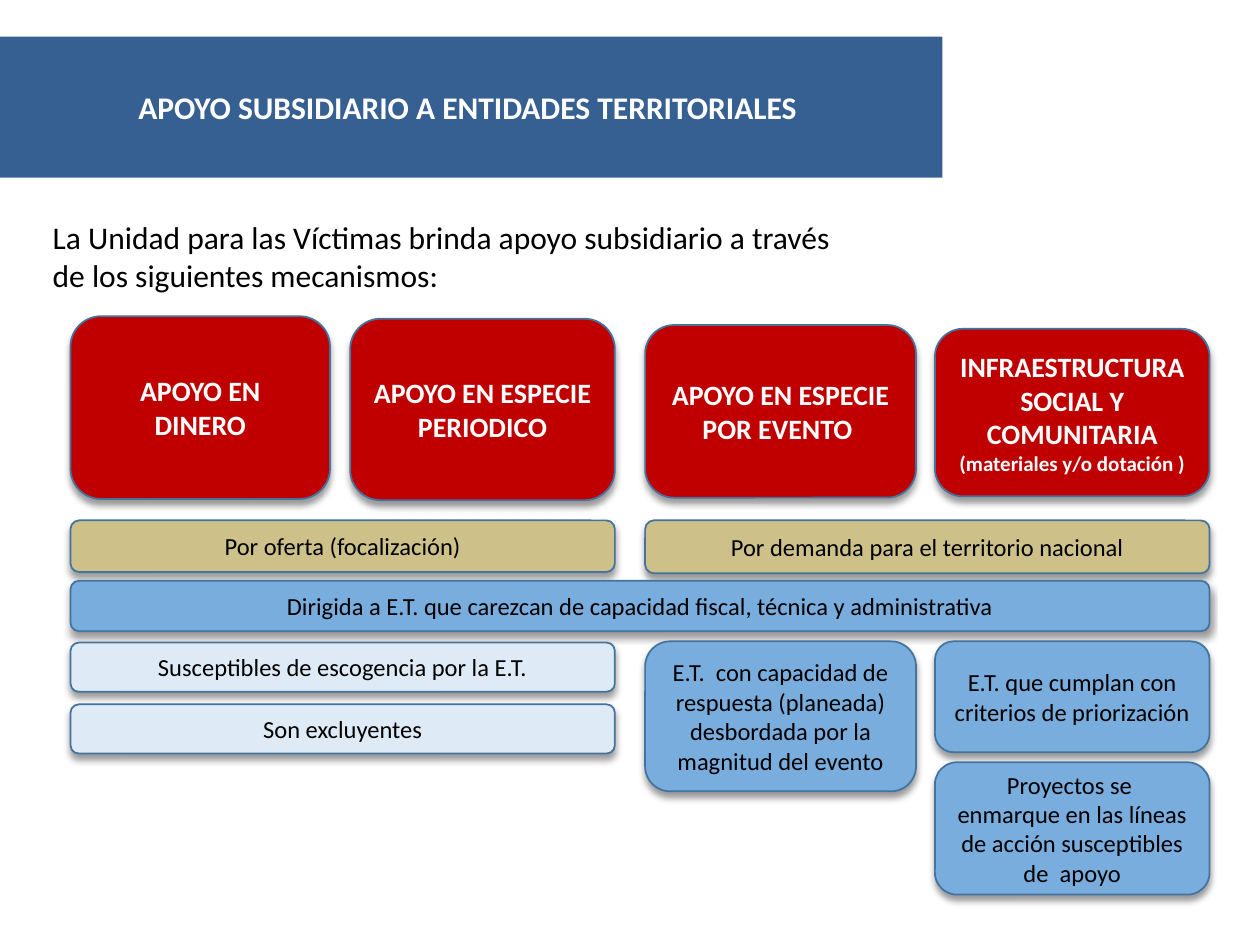
from dataclasses import dataclass

from lxml import etree
from pptx import Presentation
from pptx.dml.color import RGBColor
from pptx.enum.shapes import MSO_SHAPE
from pptx.enum.text import MSO_ANCHOR, PP_ALIGN
from pptx.oxml.ns import qn
from pptx.util import Inches, Pt

RECT, ROUND = MSO_SHAPE.RECTANGLE, MSO_SHAPE.ROUNDED_RECTANGLE
MIDDLE = MSO_ANCHOR.MIDDLE
CENTER, JUSTIFY = PP_ALIGN.CENTER, PP_ALIGN.JUSTIFY

# Left and right edge of each of the four columns, in inches
COLS = [(0.56, 2.62), (2.78, 4.88), (5.12, 7.27), (7.42, 9.6)]


@dataclass(frozen=True)
class Theme:
    font: str = "Calibri"
    black: str = "000000"
    white: str = "FFFFFF"
    navy: str = "376092"
    edge: str = "43739E"
    red: str = "C00000"
    tan: str = "CDC089"
    blue: str = "79ADDD"
    pale: str = "DEEBF7"
    title: int = 18
    head: int = 16
    text: int = 14
    note: int = 12


THEME = Theme()

# First column, last column, top, height, fill, text
CARDS = [
    (0, 0, 2.51, 1.45, THEME.red, "APOYO EN DINERO"),
    (1, 1, 2.53, 1.44, THEME.red, "APOYO EN ESPECIE PERIODICO"),
    (2, 2, 2.58, 1.37, THEME.red, "APOYO EN ESPECIE POR EVENTO "),
    (3, 3, 2.61, 1.33, THEME.red, "INFRAESTRUCTURA SOCIAL Y COMUNITARIA "),
    (0, 1, 4.13, 0.41, THEME.tan, "Por oferta (focalización)"),
    (2, 3, 4.13, 0.42, THEME.tan, "Por demanda para el territorio nacional"),
    (0, 3, 4.61, 0.4, THEME.blue,
     "Dirigida a E.T. que carezcan de capacidad fiscal, técnica y administrativa"),
    (0, 1, 5.1, 0.39, THEME.pale, "Susceptibles de escogencia por la E.T."),
    (0, 1, 5.59, 0.39, THEME.pale, "Son excluyentes"),
    (2, 2, 5.09, 1.19, THEME.blue,
     "E.T.  con capacidad de respuesta (planeada) desbordada por la magnitud del evento"),
    (3, 3, 5.09, 0.88, THEME.blue, "E.T. que cumplan con criterios de priorización"),
    (3, 3, 6.05, 1.05, THEME.blue,
     "Proyectos se  enmarque en las líneas de acción susceptibles de  apoyo"),
]


def write(para, text, size, color, bold=False):
    run = para.add_run()
    run.text = text
    look = {"name": THEME.font, "size": Pt(size), "bold": bold}
    for key, value in look.items():
        setattr(run.font, key, value)
    run.font.color.rgb = RGBColor.from_string(color)


def add_box(slide, kind, area, fill):
    """Add a plain filled shape and return it with its centred paragraph."""
    box = slide.shapes.add_shape(kind, *map(Inches, area))
    box.shadow.inherit = False
    box.fill.solid()
    box.fill.fore_color.rgb = RGBColor.from_string(fill)
    box.line.fill.background()
    frame = box.text_frame
    for key, value in {"word_wrap": True, "vertical_anchor": MIDDLE}.items():
        setattr(frame, key, value)
    para = frame.paragraphs[0]
    para.alignment = CENTER
    return box, para


def add_shade(box):
    """Give the box a soft shadow below it."""
    effects = box.element.spPr.find(qn("a:effectLst"))
    shade = etree.SubElement(
        effects, qn("a:outerShdw"), blurRad=str(Pt(4)), dist=str(Pt(3)),
        dir="5400000", rotWithShape="0")
    color = etree.SubElement(shade, qn("a:srgbClr"), val=THEME.black)
    etree.SubElement(color, qn("a:alpha"), val="40000")


def add_card(slide, first, last, top, height, fill, text):
    left, right = COLS[first][0], COLS[last][1]
    box, para = add_box(slide, ROUND, (left, top, right - left, height), fill)
    box.line.color.rgb = RGBColor.from_string(THEME.edge)
    box.line.width = Pt(1)
    add_shade(box)
    if fill == THEME.red:
        write(para, text, THEME.head, THEME.white, True)
    else:
        write(para, text, THEME.text, THEME.black)
    return para


def add_intro(slide, area, lines):
    frame = slide.shapes.add_textbox(*map(Inches, area)).text_frame
    frame.word_wrap = True
    for index, line in enumerate(lines):
        para = frame.add_paragraph() if index else frame.paragraphs[0]
        para.alignment = JUSTIFY
        write(para, line, THEME.title, THEME.black)


def main():
    deck = Presentation()
    deck.slide_width, deck.slide_height = Inches(10), Inches(7.5)
    slide = deck.slides.add_slide(deck.slide_layouts[6])

    _, title = add_box(slide, RECT, (0, 0.29, 7.48, 1.12), THEME.navy)
    write(title, "APOYO SUBSIDIARIO A ENTIDADES TERRITORIALES ",
          THEME.title, THEME.white, True)
    add_intro(slide, (0.32, 1.68, 7.99, 0.71), [
        "La Unidad para las Víctimas brinda apoyo subsidiario a través ",
        "de los siguientes mecanismos:"])

    paras = [add_card(slide, *card) for card in CARDS]
    write(paras[3], "(materiales y/o dotación )", THEME.note, THEME.white, True)

    deck.save("out.pptx")


if __name__ == "__main__":
    main()
